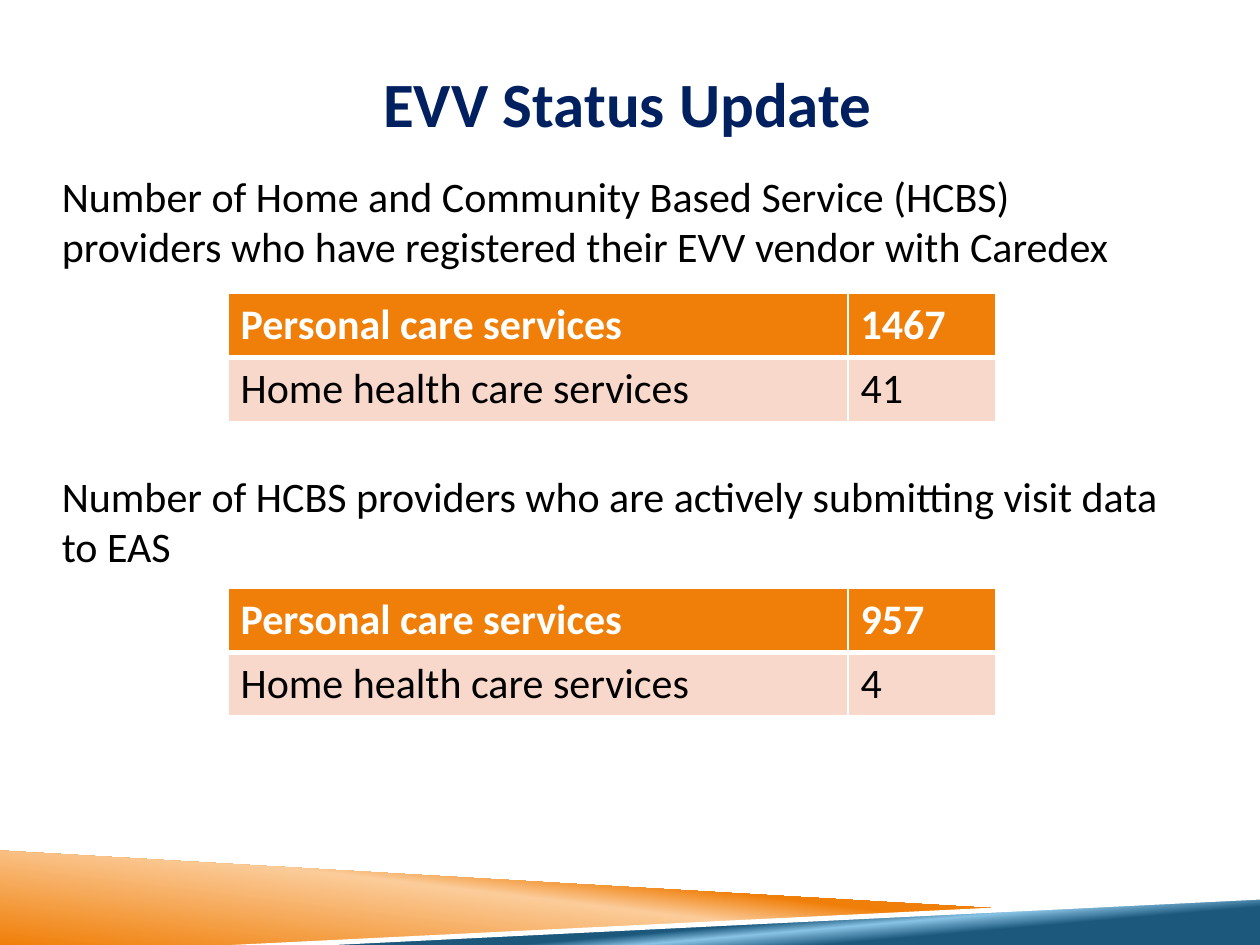
from dataclasses import dataclass

from lxml.etree import SubElement
from pptx import Presentation
from pptx.dml.color import RGBColor
from pptx.enum.text import MSO_ANCHOR, MSO_AUTO_SIZE, PP_ALIGN
from pptx.oxml import parse_xml
from pptx.oxml.ns import nsdecls, qn
from pptx.util import Inches, Pt


@dataclass(frozen=True)
class Theme:
    font: str = "Calibri"
    title_size: int = 36
    text_size: int = 24
    navy: str = "002060"
    black: str = "000000"
    white: str = "FFFFFF"
    orange: str = "F07F09"
    light_orange: str = "FBCC9A"
    pink: str = "F9D8CC"
    blue: str = "1B587C"
    light_blue: str = "89C3E5"


THEME = Theme()

TITLE = "EVV Status Update"
STATEMENTS = [
    "Number of Home and Community Based Service (HCBS) providers "
    "who have registered their EVV vendor with Caredex",
    "Number of HCBS providers who are actively submitting visit data to EAS",
]
STATEMENT_GAP = 114
TABLES = [
    (2.33, [("Personal care services", "1467"), ("Home health care services", "41")]),
    (4.67, [("Personal care services", "957"), ("Home health care services", "4")]),
]
TABLE_LEFT = 1.81
COLUMN_WIDTHS = [4.92, 1.17]
ROW_HEIGHT = 0.5

ORANGE_STOPS = [(0, THEME.orange), (52, THEME.light_orange), (66, THEME.orange)]
BLUE_STOPS = [(28, THEME.blue), (40, THEME.light_blue), (48, THEME.blue)]
WEDGES = [
    ([(0, 6.75), (7.92, 7.21), (2, 7.5), (0, 7.5)], ORANGE_STOPS, 277),
    ([(1.98, 7.5), (10, 7.12), (10, 7.5)], BLUE_STOPS, 265),
    ([(10, 7.1), (1.84, 7.5), (2.66, 7.5), (10, 7.14)], [(0, THEME.white)], 0),
]


def color(value):
    return RGBColor.from_string(value)


def style(paragraph, size, value, bold=False):
    for span in paragraph.runs:
        span.font.name = THEME.font
        span.font.size = Pt(size)
        span.font.bold = bold
        span.font.color.rgb = color(value)


def place(box, left, top, width, height):
    box.left, box.top = Inches(left), Inches(top)
    box.width, box.height = Inches(width), Inches(height)
    frame = box.text_frame
    frame.margin_left = frame.margin_right = 0
    frame.margin_top = frame.margin_bottom = Inches(0.05)
    frame.word_wrap = True
    frame.auto_size = MSO_AUTO_SIZE.NONE
    return frame


def add_wedge(page, points, stops, angle):
    corners = [(Inches(x), Inches(y)) for x, y in points]
    builder = page.shapes.build_freeform(*corners[0])
    builder.add_line_segments(corners[1:], close=True)
    wedge = builder.convert_to_shape()
    wedge.shadow.inherit = False
    wedge.line.fill.background()
    if len(stops) == 1:
        wedge.fill.solid()
        wedge.fill.fore_color.rgb = color(stops[0][1])
        return
    wedge.fill.gradient()
    wedge.fill.gradient_angle = 360 - angle
    stop_list = wedge._element.spPr.find(qn("a:gradFill")).find(qn("a:gsLst"))
    for stop in list(stop_list):
        stop_list.remove(stop)
    for position, value in stops:
        stop = SubElement(stop_list, qn("a:gs"), pos=str(position * 1000))
        SubElement(stop, qn("a:srgbClr"), val=value)


def add_borders(cell, bottom_width):
    properties = cell._tc.get_or_add_tcPr()
    widths = {"lnL": 1, "lnR": 1, "lnT": 1, "lnB": bottom_width}
    for index, (side, width) in enumerate(widths.items()):
        border = parse_xml(
            f'<a:{side} {nsdecls("a")} w="{Pt(width)}"><a:solidFill>'
            f'<a:srgbClr val="{THEME.white}"/></a:solidFill></a:{side}>'
        )
        properties.insert(index, border)


def add_count_table(page, top, rows):
    table = page.shapes.add_table(
        len(rows), len(COLUMN_WIDTHS), Inches(TABLE_LEFT), Inches(top),
        Inches(sum(COLUMN_WIDTHS)), Inches(ROW_HEIGHT * len(rows)),
    ).table
    for column, width in zip(table.columns, COLUMN_WIDTHS):
        column.width = Inches(width)
    for row_index, row in enumerate(rows):
        header = row_index == 0
        for column_index, text in enumerate(row):
            cell = table.cell(row_index, column_index)
            cell.text_frame.text = text
            style(cell.text_frame.paragraphs[0], THEME.text_size,
                  THEME.white if header else THEME.black, header)
            cell.fill.solid()
            cell.fill.fore_color.rgb = color(THEME.orange if header else THEME.pink)
            add_borders(cell, 3 if header else 1)
        if not header:
            continue
        for column_index in range(len(row)):
            below = table.cell(1, column_index)
            below.vertical_anchor = MSO_ANCHOR.TOP


def main():
    deck = Presentation()
    deck.slide_width, deck.slide_height = Inches(10), Inches(7.5)
    page = deck.slides.add_slide(deck.slide_layouts[1])

    for points, stops, angle in WEDGES:
        add_wedge(page, points, stops, angle)

    title = place(page.shapes.title, 0.67, 0.33, 8.62, 0.96)
    title.text = TITLE
    title.vertical_anchor = MSO_ANCHOR.MIDDLE
    title.paragraphs[0].alignment = PP_ALIGN.CENTER
    style(title.paragraphs[0], THEME.title_size, THEME.navy, True)

    body = place(page.placeholders[1], 0.42, 1.3, 8.88, 5.37)
    body.vertical_anchor = MSO_ANCHOR.TOP
    for index, statement in enumerate(STATEMENTS):
        paragraph = body.paragraphs[0] if index == 0 else body.add_paragraph()
        paragraph.text = statement
        paragraph.space_before = Pt(STATEMENT_GAP if index else 0)
        properties = paragraph._p.get_or_add_pPr()
        properties.set("marL", str(Inches(0.07)))
        properties.set("indent", "0")
        SubElement(properties, qn("a:buNone"))
        style(paragraph, THEME.text_size, THEME.black)

    for top, rows in TABLES:
        add_count_table(page, top, rows)

    deck.save("out.pptx")


if __name__ == "__main__":
    main()
